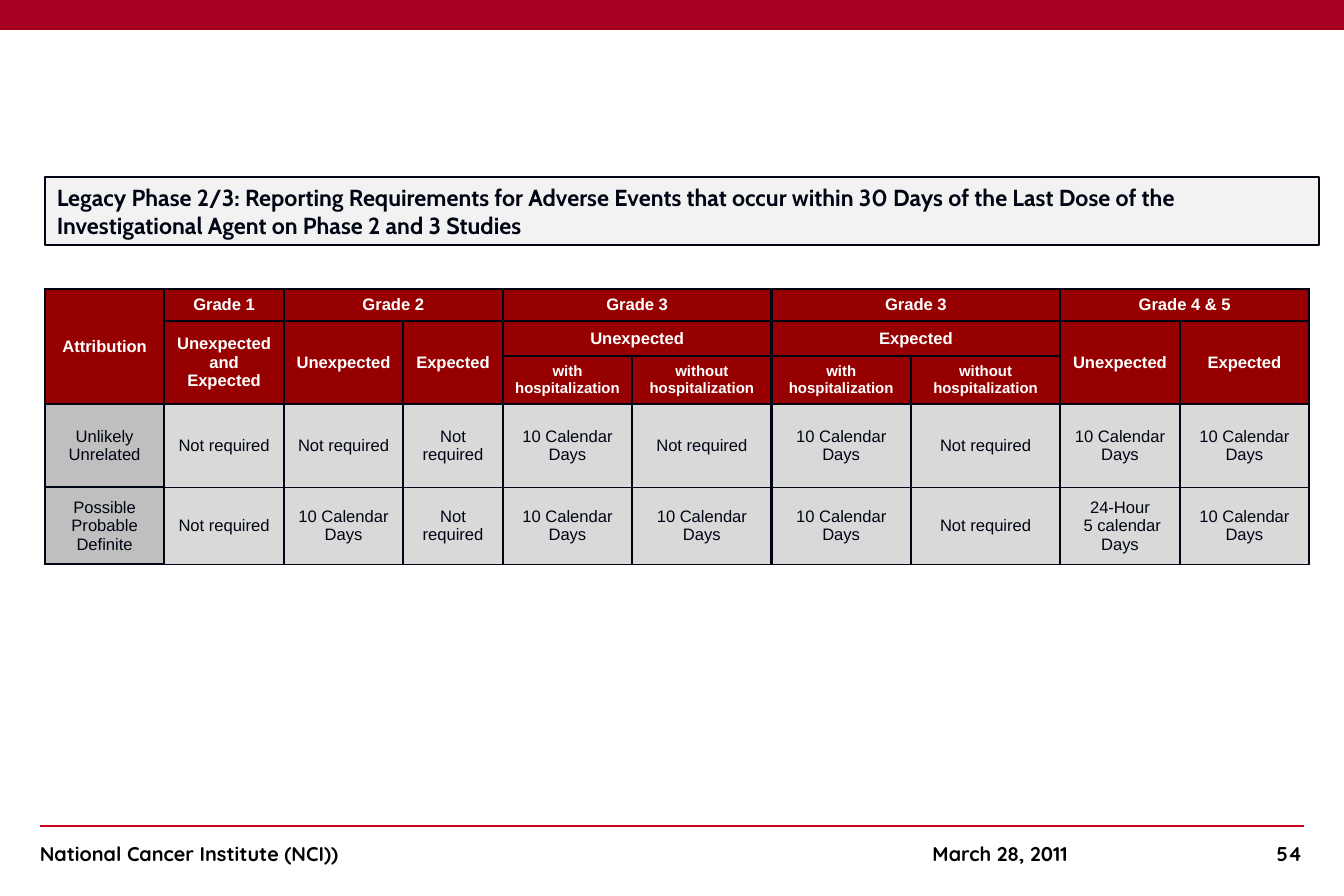
from dataclasses import dataclass

from lxml.etree import SubElement
from pptx import Presentation
from pptx.dml.color import RGBColor
from pptx.enum.shapes import MSO_CONNECTOR, MSO_SHAPE
from pptx.enum.text import MSO_ANCHOR, MSO_AUTO_SIZE, PP_ALIGN
from pptx.oxml import parse_xml
from pptx.oxml.ns import nsdecls, qn
from pptx.util import Pt

TITLE = ("Legacy Phase 2/3: Reporting Requirements for Adverse Events that occur "
         "within 30 Days of the Last Dose of the Investigational Agent on "
         "Phase 2 and 3 Studies")

# row, column, rows spanned, columns spanned, text
HEADS = [
    (0, 0, 3, 1, "Attribution"),
    (0, 1, 1, 1, "Grade 1"),
    (0, 2, 1, 2, "Grade 2"),
    (0, 4, 1, 2, "Grade 3"),
    (0, 6, 1, 2, "Grade 3"),
    (0, 8, 1, 2, "Grade 4 & 5"),
    (1, 1, 2, 1, "Unexpected\nand\nExpected"),
    (1, 2, 2, 1, "Unexpected"),
    (1, 3, 2, 1, "Expected"),
    (1, 4, 1, 2, "Unexpected"),
    (1, 6, 1, 2, "Expected"),
    (1, 8, 2, 1, "Unexpected"),
    (1, 9, 2, 1, "Expected"),
    (2, 4, 1, 1, "with hospitalization"),
    (2, 5, 1, 1, "without hospitalization"),
    (2, 6, 1, 1, "with hospitalization"),
    (2, 7, 1, 1, "without hospitalization"),
]
NONE, TEN = "Not required", "10 Calendar Days"
BODY = [
    ["Unlikely\nUnrelated", NONE, NONE, NONE, TEN, NONE, TEN, NONE, TEN, TEN],
    ["Possible\nProbable\nDefinite", NONE, TEN, NONE, TEN, TEN, TEN, NONE,
     "24-Hour\v 5 calendar Days", TEN],
]
COLS = [72, 72, 72, 60, 78, 84, 84, 90, 72, 78]
ROWS = [19.2, 21.2, 28.8, 50.4, 46.4]
TOP = 3  # header rows

# left, width, alignment, text
FOOT = [
    (24, 300, PP_ALIGN.LEFT, "National Cancer Institute (NCI))"),
    (562, 120, PP_ALIGN.LEFT, "March 28, 2011"),
    (684.8, 100, PP_ALIGN.RIGHT, "54"),
]


@dataclass(frozen=True)
class Theme:
    bar: str = "A50021"
    rule: str = "C80026"
    ink: str = "000514"
    black: str = "000000"
    white: str = "FFFFFF"
    panel: str = "F2F2F2"
    head: str = "960000"
    label: str = "BFBFBF"
    data: str = "D9D9D9"
    title_pt: int = 14
    foot_pt: int = 12
    cell_pt: int = 10
    sub_pt: int = 9


LOOK = Theme()


def paint(fill, hue):
    fill.solid()
    fill.fore_color.rgb = RGBColor.from_string(hue)


def style(frame, face, size, hue, bold=True, align=PP_ALIGN.LEFT):
    for para in frame.paragraphs:
        para.alignment = align
        font = para.font
        font.name, font.size, font.bold = face, Pt(size), bold
        font.color.rgb = RGBColor.from_string(hue)


def edge(cell, top, base):
    """Rule the four sides of a cell; the sides come before its fill."""
    props = cell._tc.get_or_add_tcPr()
    for spot, (side, wide) in enumerate(
            [("L", 1.5), ("R", 1.5), ("T", top), ("B", base)]):
        props.insert(spot, parse_xml(
            f'<a:ln{side} {nsdecls("a")} w="{Pt(wide)}"><a:solidFill>'
            f'<a:srgbClr val="{LOOK.ink}"/></a:solidFill></a:ln{side}>'))


def add_bar(slide):
    bar = slide.shapes.add_shape(MSO_SHAPE.RECTANGLE, 0, 0, Pt(810), Pt(18))
    bar.shadow.inherit = False
    paint(bar.fill, LOOK.bar)
    bar.line.fill.background()


def add_title(slide):
    title = slide.shapes.title
    title.left, title.top, title.width, title.height = map(Pt, (27, 106.6, 768, 41))
    paint(title.fill, LOOK.panel)
    paint(title.line.fill, LOOK.ink)
    title.line.width = Pt(1)
    frame = title.text_frame
    frame.text = TITLE
    frame.word_wrap = True
    frame.auto_size = MSO_AUTO_SIZE.NONE
    frame.vertical_anchor = MSO_ANCHOR.MIDDLE
    style(frame, "Cabin", LOOK.title_pt, LOOK.ink)


def add_grid(slide):
    grid = slide.shapes.add_table(
        len(ROWS), len(COLS), Pt(27), Pt(174.2), Pt(sum(COLS)), Pt(sum(ROWS))).table
    grid.first_row = grid.horz_banding = False
    for col, wide in zip(grid.columns, COLS):
        col.width = Pt(wide)
    for row, high in zip(grid.rows, ROWS):
        row.height = Pt(high)

    for r, c, down, over, text in HEADS:
        cell = grid.cell(r, c)
        if down * over > 1:
            cell.merge(grid.cell(r + down - 1, c + over - 1))
        cell.text = text
    for r, line in enumerate(BODY, TOP):
        for c, text in enumerate(line):
            grid.cell(r, c).text = text

    for r in range(len(ROWS)):
        for c in range(len(COLS)):
            cell = grid.cell(r, c)
            head, data = r < TOP, r >= TOP and c > 0
            cell.vertical_anchor = MSO_ANCHOR.MIDDLE
            if data:
                cell.margin_left = cell.margin_right = Pt(5.76)
                cell.margin_top = cell.margin_bottom = 0
            paint(cell.fill, LOOK.head if head else LOOK.data if data else LOOK.label)
            edge(cell, 1 if data and r > TOP else 1.5, 1 if data else 1.5)
            style(cell.text_frame, "Arial",
                  LOOK.sub_pt if r == TOP - 1 else LOOK.cell_pt,
                  LOOK.white if head else LOOK.ink, head, PP_ALIGN.CENTER)


def add_foot(slide):
    rule = slide.shapes.add_connector(
        MSO_CONNECTOR.STRAIGHT, Pt(24), Pt(498), Pt(786), Pt(498))
    paint(rule.line.fill, LOOK.rule)
    rule.line.width = Pt(1)
    SubElement(rule._element.spPr, qn("a:effectLst"))
    for left, wide, align, text in FOOT:
        frame = slide.shapes.add_textbox(
            Pt(left), Pt(504), Pt(wide), Pt(21.6)).text_frame
        frame.margin_left = frame.margin_right = 0
        frame.word_wrap = True
        frame.text = text
        style(frame, "Quicksand", LOOK.foot_pt, LOOK.black, align=align)


def main():
    deck = Presentation()
    deck.slide_width, deck.slide_height = Pt(810), Pt(540)
    slide = deck.slides.add_slide(deck.slide_layouts[5])
    for draw in (add_bar, add_title, add_grid, add_foot):
        draw(slide)
    deck.save("out.pptx")


if __name__ == "__main__":
    main()
